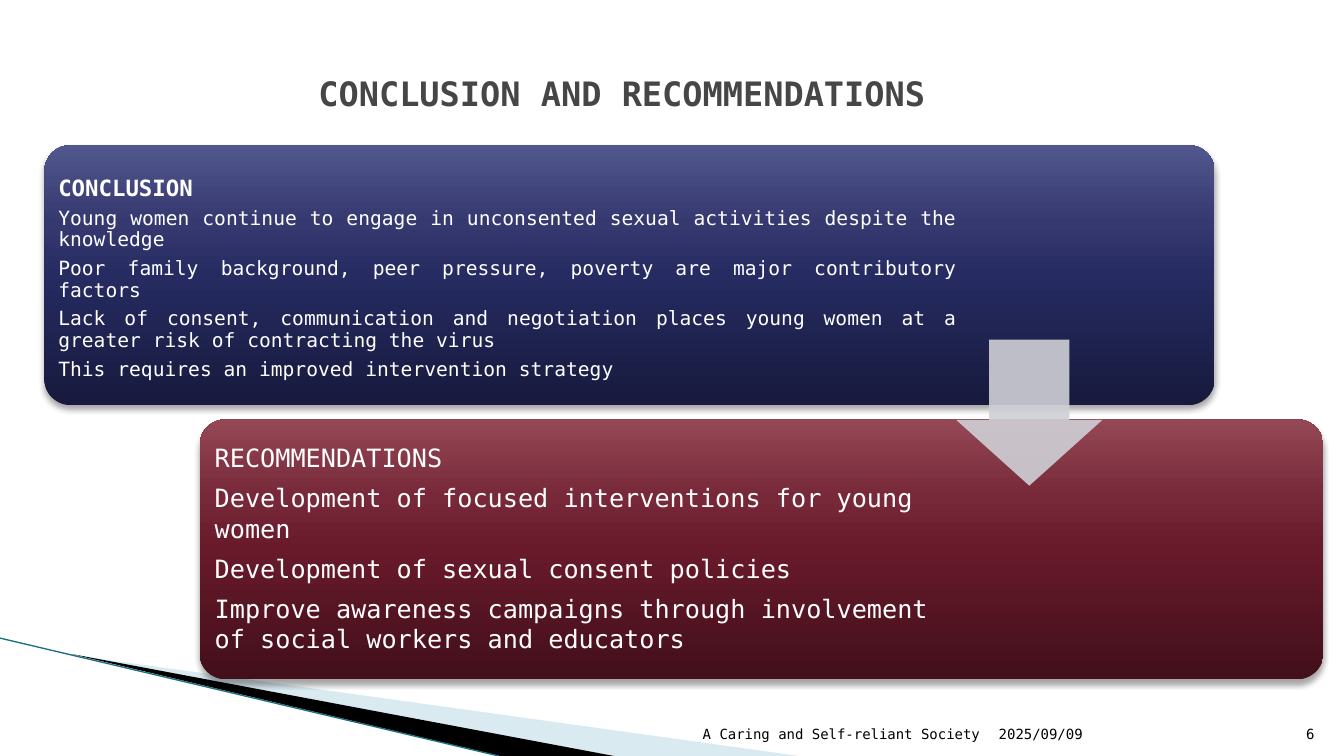
from lxml.etree import SubElement
from pptx import Presentation
from pptx.dml.color import RGBColor
from pptx.enum.shapes import MSO_CONNECTOR, MSO_SHAPE
from pptx.enum.text import MSO_ANCHOR, MSO_AUTO_SIZE, PP_ALIGN
from pptx.oxml.ns import qn
from pptx.util import Cm, Pt


def color(code):
    return RGBColor.from_string(code)


def write(para, text, size, code, bold=False):
    span = para.add_run()
    span.text = text
    span.font.name = "DejaVu Sans Mono"
    span.font.size = Pt(size)
    span.font.bold = bold
    span.font.color.rgb = color(code)


deck = Presentation()
deck.slide_width = Cm(33.87)
deck.slide_height = Cm(19.05)
page = deck.slides.add_slide(deck.slide_layouts.get_by_name("Two Content"))
title, conclusion, recommendations = page.placeholders

wedges = [
    ("A0CBDC", 40, [(1.85, 16.51), (20.14, 19.05), (15.44, 19.05)]),
    ("000000", 100, [(1.8, 16.48), (15.47, 19.05), (12.6, 19.05)]),
]
for code, opacity, points in wedges:
    corners = [(Cm(x), Cm(y)) for x, y in points]
    builder = page.shapes.build_freeform(*corners[0])
    builder.add_line_segments(corners[1:])
    wedge = builder.convert_to_shape()
    wedge.shadow.inherit = False
    wedge.fill.solid()
    wedge.fill.fore_color.rgb = color(code)
    wedge.line.fill.background()
    tint = wedge.element.spPr.find(qn("a:solidFill"))[0]
    SubElement(tint, qn("a:alpha"), val=str(opacity * 1000))

edge = page.shapes.add_connector(MSO_CONNECTOR.STRAIGHT, 0, Cm(16.08), Cm(12.57), Cm(19.05))
edge.line.color.rgb = color("1B7083")
edge.line.width = Pt(0.95)
SubElement(edge.element.spPr, qn("a:effectLst"))

cards = [
    (conclusion, (1.12, 3.66, 29.49), 22.96, (0.15, 0.6), (16, 14), True, 0.9, 5.5,
     PP_ALIGN.JUSTIFY, ("171A3D", "262B61", "353970", "51568D"), [
        "CONCLUSION",
        "Young women continue to engage in unconsented sexual activities despite the knowledge",
        "Poor family background, peer pressure, poverty are major contributory factors",
        "Lack of consent, communication and negotiation places young women at a greater risk of contracting the virus",
        "This requires an improved intervention strategy",
     ]),
    (recommendations, (5.03, 10.57, 28.32), 19.02, (0.18, 0.46), (18, 18), False, 1.0, 7,
     PP_ALIGN.LEFT, ("420F1A", "681A2B", "772939", "944755"), [
        "RECOMMENDATIONS",
        "Development of focused interventions for young women",
        "Development of sexual consent policies",
        "Improve awareness campaigns through involvement of social workers and educators",
     ]),
]
for body, place, text_width, insets, sizes, bold, spacing, gap, align, shades, lines in cards:
    left, top, width = place
    card = page.shapes.add_shape(
        MSO_SHAPE.ROUNDED_RECTANGLE, Cm(left), Cm(top), Cm(width), Cm(6.55))
    card.adjustments[0] = 0.1
    card.line.fill.background()
    card.fill.gradient()
    card.fill.gradient_angle = 90
    stops = card.element.spPr.find(".//" + qn("a:gsLst"))
    stops.clear()
    for position, shade in zip((0, 50, 70, 100), shades):
        stop = SubElement(stops, qn("a:gs"), pos=str(position * 1000))
        SubElement(stop, qn("a:srgbClr"), val=shade)
    card.shadow.inherit = False
    effects = card.element.spPr.find(qn("a:effectLst"))
    shadow = SubElement(effects, qn("a:outerShdw"), blurRad=str(Pt(4)), dist=str(Pt(3)),
                        dir="5400000", rotWithShape="0")
    shadow_tint = SubElement(shadow, qn("a:srgbClr"), val="000000")
    SubElement(shadow_tint, qn("a:alpha"), val="35000")

    card.element.addnext(body.element)
    body.left, body.top = Cm(left + 0.2), Cm(top + 0.2)
    body.width, body.height = Cm(text_width), Cm(6.17)
    frame = body.text_frame
    frame.word_wrap = True
    frame.auto_size = MSO_AUTO_SIZE.NONE
    frame.vertical_anchor = MSO_ANCHOR.TOP
    frame.margin_left = frame.margin_right = Cm(insets[0])
    frame.margin_top, frame.margin_bottom = Cm(insets[1]), 0
    for index, line in enumerate(lines):
        heading = index == 0
        para = frame.paragraphs[0] if heading else frame.add_paragraph()
        para.alignment = PP_ALIGN.LEFT if heading else align
        para.line_spacing = 0.9 if heading else spacing
        para.space_before = Pt(0)
        para.space_after = Pt(gap)
        properties = para._p.get_or_add_pPr()
        properties.set("marL", "0")
        properties.set("indent", "0")
        SubElement(properties, qn("a:buNone"))
        write(para, line, sizes[0] if heading else sizes[1], "FFFFFF", heading and bold)

arrow = page.shapes.add_shape(MSO_SHAPE.DOWN_ARROW, Cm(24.1), Cm(8.56), Cm(3.68), Cm(3.68))
arrow.adjustments[0] = 0.55
arrow.adjustments[1] = 0.45
arrow.shadow.inherit = False
arrow.fill.solid()
arrow.fill.fore_color.rgb = color("CFD0D6")
arrow.line.fill.background()
arrow_tint = arrow.element.spPr.find(qn("a:solidFill"))[0]
SubElement(arrow_tint, qn("a:alpha"), val="90000")

footers = [
    ("A Caring and Self-reliant Society", 16.23, 8.71, PP_ALIGN.RIGHT),
    ("2025/09/09", 24.92, 7.11, PP_ALIGN.LEFT),
    ("6", 32.03, 1.35, PP_ALIGN.RIGHT),
]
for text, left, width, align in footers:
    box = page.shapes.add_textbox(Cm(left), Cm(17.81), Cm(width), Cm(1.02))
    box.text_frame.word_wrap = True
    box.text_frame.vertical_anchor = MSO_ANCHOR.BOTTOM
    para = box.text_frame.paragraphs[0]
    para.alignment = align
    write(para, text, 10, "000000")

title.left, title.top, title.width, title.height = Cm(7.77), Cm(0.76), Cm(24.41), Cm(3.18)
title.text_frame.auto_size = MSO_AUTO_SIZE.NONE
title.text_frame.vertical_anchor = MSO_ANCHOR.MIDDLE
para = title.text_frame.paragraphs[0]
para.alignment = PP_ALIGN.LEFT
write(para, "CONCLUSION AND RECOMMENDATIONS", 24, "464646", True)

deck.save("out.pptx")
